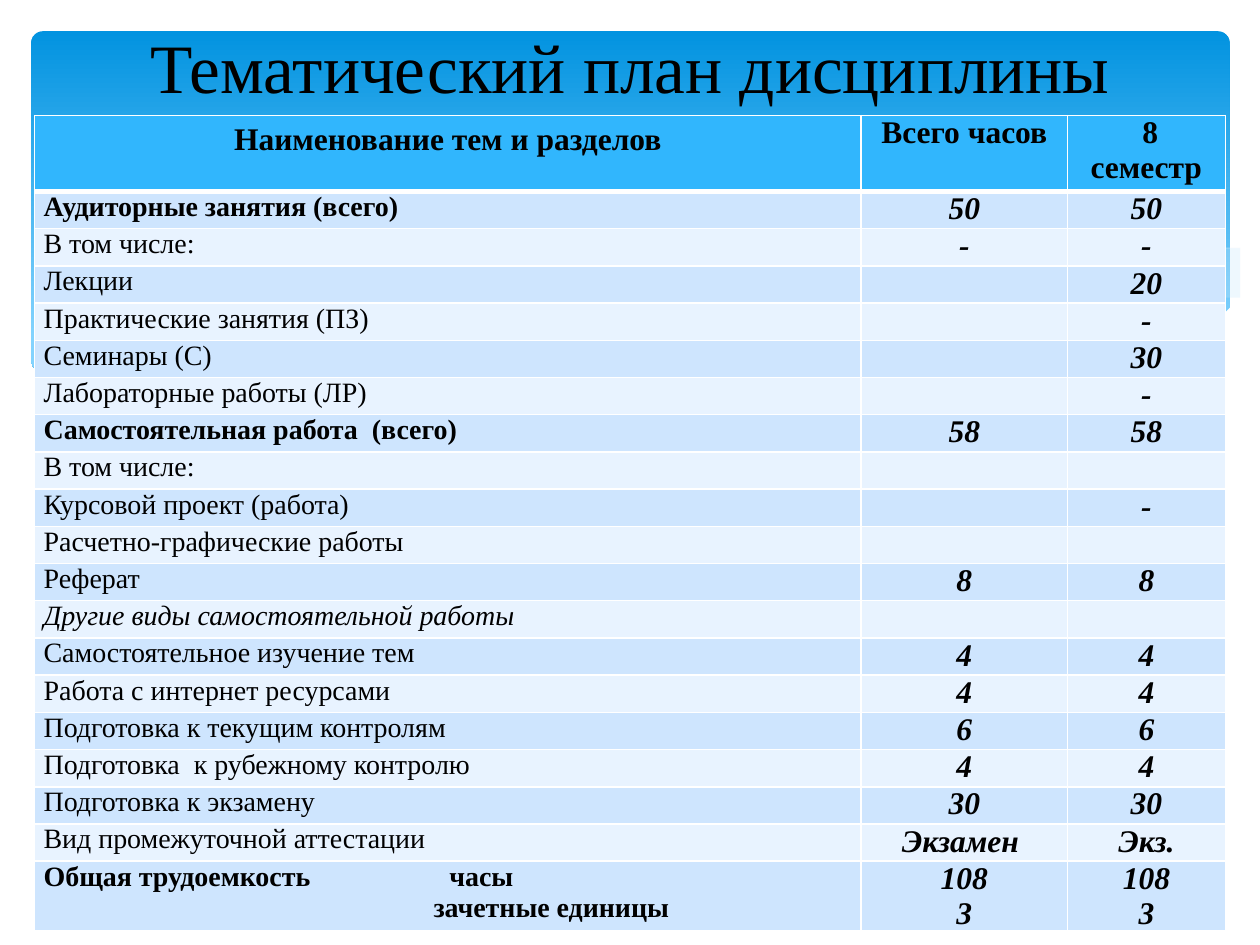
from lxml.etree import SubElement
from pptx import Presentation
from pptx.dml.color import RGBColor
from pptx.enum.shapes import MSO_SHAPE
from pptx.enum.text import MSO_ANCHOR, MSO_AUTO_SIZE, PP_ALIGN
from pptx.oxml.ns import qn
from pptx.util import Cm, Pt

FONT = "Times New Roman"
BLACK = RGBColor(0x00, 0x00, 0x00)
WHITE = RGBColor(0xFF, 0xFF, 0xFF)
DEEP_BLUE = RGBColor(0x02, 0x93, 0xE0)
SKY_BLUE = RGBColor(0x83, 0xD3, 0xFE)
PALE_BLUE = RGBColor(0xC6, 0xE7, 0xFC)
HEADER_BLUE = RGBColor(0x31, 0xB6, 0xFD)
BANDS = (RGBColor(0xCE, 0xE5, 0xFE), RGBColor(0xE8, 0xF3, 0xFF))

RIGHT_WAVE = [(24.76, 5.08), (23, 5.41), (21.13, 5.84), (18.52, 6.43), (16.79, 6.73),
              (19.23, 7.01), (21.16, 7.04), (22.78, 6.86), (24.1, 6.48), (24.79, 6.27),
              (24.79, 5.08)]
LONG_WAVE = [(22.68, 6.93), (20.5, 6.6), (17.93, 6.1), (14.83, 5.36), (12.75, 4.95),
             (10.67, 4.75), (8.74, 4.72), (7.26, 4.85), (9.19, 5.16), (11.4, 5.64),
             (14.38, 6.3), (16.89, 6.76), (19, 6.99), (20.78, 7.06)]
LONG_CURVE = [(7.85, 4.95), (9.86, 4.75), (11.9, 4.8), (14.12, 5), (16.89, 5.41),
              (20.19, 6.12), (23.04, 6.91)]
RIGHT_CURVE = [(15.57, 6.53), (18.29, 5.82), (21.23, 5.18), (23.11, 4.88), (24.77, 4.7)]
WHITE_WAVE = [(24.82, 6.25), (23.62, 6.65), (22.2, 6.93), (20.55, 7.04), (18.44, 6.91),
              (15.9, 6.55), (13.44, 6.07), (11.35, 5.59), (9.27, 5.12), (7.42, 4.83),
              (5.84, 4.7), (4.5, 4.67), (3.35, 4.72), (2.16, 4.9), (1.32, 5.16),
              (0.58, 5.41), (0.58, 8.36), (24.82, 8.36)]

COLUMN_WIDTHS = (16.66, 4.16, 3.18)
HEADER_HEIGHT, ROW_HEIGHT, TOTAL_HEIGHT = 1.53, 0.75, 1.37
HEADINGS = ("Наименование тем и разделов", "Всего часов", " 8 семестр")
ROWS = [
    ("Аудиторные занятия (всего)", "50", "50"),
    ("В том числе:", "-", "-"),
    ("Лекции", "", "20"),
    ("Практические занятия (ПЗ)", "", "-"),
    ("Семинары (С)", "", "30"),
    ("Лабораторные работы (ЛР)", "", "-"),
    ("Самостоятельная работа  (всего)", "58", "58"),
    ("В том числе:", "", ""),
    ("Курсовой проект (работа)", "", "-"),
    ("Расчетно-графические работы", "", ""),
    ("Реферат", "8", "8"),
    ("Другие виды самостоятельной работы", "", ""),
    ("Самостоятельное изучение тем", "4", "4"),
    ("Работа с интернет ресурсами", "4", "4"),
    ("Подготовка к текущим контролям", "6", "6"),
    ("Подготовка  к рубежному контролю", "4", "4"),
    ("Подготовка к экзамену", "30", "30"),
    ("Вид промежуточной аттестации", "Экзамен ", "Экз."),
    ("Общая трудоемкость\tчасы\nзачетные единицы", "108\n3", "108\n3"),
]
BOLD_ROWS = (1, 7, len(ROWS))
ITALIC_ROWS = (12,)


def add_panel(slide):
    """Add the rounded gradient panel behind the heading."""
    panel = slide.shapes.add_shape(MSO_SHAPE.ROUNDED_RECTANGLE,
                                   Cm(0.63), Cm(0.63), Cm(24.16), Cm(6.86))
    panel.adjustments[0] = 0.034
    panel.shadow.inherit = False
    panel.line.fill.background()
    panel.fill.gradient()
    panel.fill.gradient_angle = 270
    stops = panel.fill.gradient_stops
    for stop, color, position in zip(stops, (DEEP_BLUE, SKY_BLUE), (0, 0.9)):
        stop.color.rgb = color
        stop.position = position


def add_outline(slide, points, closed):
    """Add a freeform through points given in centimetres."""
    builder = slide.shapes.build_freeform(*points[0], scale=Cm(1))
    builder.add_line_segments(points[1:], close=closed)
    shape = builder.convert_to_shape()
    shape.shadow.inherit = False
    return shape


def add_wave(slide, points, color, opacity=100):
    """Add a filled wave with the given opacity in percent."""
    wave = add_outline(slide, points, True)
    wave.line.fill.background()
    wave.fill.solid()
    wave.fill.fore_color.rgb = color
    if opacity < 100:
        color_element = next(wave._element.spPr.iter(qn("a:srgbClr")))
        SubElement(color_element, qn("a:alpha"), val=str(opacity * 1000))


def add_curve(slide, points):
    """Add a thin white open curve."""
    curve = add_outline(slide, points, False)
    curve.fill.background()
    curve.line.color.rgb = WHITE
    curve.line.width = Pt(0.25)


def set_borders(cell, top, bottom):
    """Give a cell white borders with widths in points."""
    properties = cell._tc.get_or_add_tcPr()
    for side, width in (("L", 1), ("R", 1), ("T", top), ("B", bottom)):
        line = SubElement(properties, qn(f"a:ln{side}"), w=str(Pt(width)))
        fill = SubElement(line, qn("a:solidFill"))
        SubElement(fill, qn("a:srgbClr"), val=str(WHITE))


def format_cell(cell, text, color, size, bold, italic, alignment):
    """Write a cell's text and set its fill and font."""
    cell.margin_left = cell.margin_right = Cm(0.18)
    cell.margin_top = cell.margin_bottom = 0
    cell.fill.solid()
    cell.fill.fore_color.rgb = color
    cell.text = text
    for paragraph in cell.text_frame.paragraphs:
        paragraph.alignment = alignment
        paragraph.font.name = FONT
        paragraph.font.size = Pt(size)
        paragraph.font.bold = bold
        paragraph.font.italic = italic
        paragraph.font.color.rgb = BLACK


def align_total_units(cell):
    """Place the two unit names of the total row with a tab and an indent."""
    hours, credits = cell.text_frame.paragraphs
    tabs = hours._p.get_or_add_pPr().makeelement(qn("a:tabLst"))
    SubElement(tabs, qn("a:tab"), pos=str(Cm(8.18)), algn="l")
    hours._p.pPr.insert(0, tabs)
    credits._p.get_or_add_pPr().set("marL", str(Cm(7.86)))


def add_plan_table(slide):
    """Add the table of topics and hours."""
    heights = [HEADER_HEIGHT] + [ROW_HEIGHT] * (len(ROWS) - 1) + [TOTAL_HEIGHT]
    frame = slide.shapes.add_table(len(heights), len(COLUMN_WIDTHS), Cm(0.7), Cm(2.33),
                                   Cm(sum(COLUMN_WIDTHS)), Cm(sum(heights)))
    table = frame.table
    table.first_row = table.horz_banding = False
    for column, width in zip(table.columns, COLUMN_WIDTHS):
        column.width = Cm(width)
    for row, height in zip(table.rows, heights):
        row.height = Cm(height)
    for index, texts in enumerate([HEADINGS] + ROWS):
        header = index == 0
        color = HEADER_BLUE if header else BANDS[(index - 1) % 2]
        for column, text in enumerate(texts):
            cell = table.cell(index, column)
            label = column == 0 and not header
            set_borders(cell, 3 if index == 1 else 1, 3 if header else 1)
            format_cell(cell, text, color, 16 if label else 18,
                        not label or index in BOLD_ROWS,
                        index in ITALIC_ROWS if label else not header,
                        PP_ALIGN.LEFT if label else PP_ALIGN.CENTER)
    first_heading = table.cell(0, 0)
    first_heading.margin_top = first_heading.margin_bottom = Cm(0.13)
    align_total_units(table.cell(len(ROWS), 0))


def format_title(slide):
    """Write the title and bring it to the front."""
    title = slide.shapes.title
    title.left, title.top, title.width, title.height = Cm(1.27), Cm(0.74), Cm(22.86), Cm(1.19)
    title.text = "Тематический план дисциплины"
    title.text_frame.auto_size = MSO_AUTO_SIZE.NONE
    title.text_frame.vertical_anchor = MSO_ANCHOR.MIDDLE
    paragraph = title.text_frame.paragraphs[0]
    paragraph.alignment = PP_ALIGN.CENTER
    paragraph.font.name = FONT
    paragraph.font.size = Pt(39.6)
    paragraph.font.color.rgb = BLACK
    slide.shapes._spTree.append(title._element)


def main():
    """Build the slide and save the presentation."""
    presentation = Presentation()
    presentation.slide_width, presentation.slide_height = Cm(25.4), Cm(19.05)
    slide = presentation.slides.add_slide(presentation.slide_layouts[5])
    add_panel(slide)
    add_wave(slide, RIGHT_WAVE, PALE_BLUE, 29)
    add_wave(slide, LONG_WAVE, PALE_BLUE, 40)
    add_curve(slide, LONG_CURVE)
    add_curve(slide, RIGHT_CURVE)
    add_wave(slide, WHITE_WAVE, WHITE)
    add_plan_table(slide)
    format_title(slide)
    presentation.save("out.pptx")


if __name__ == "__main__":
    main()
